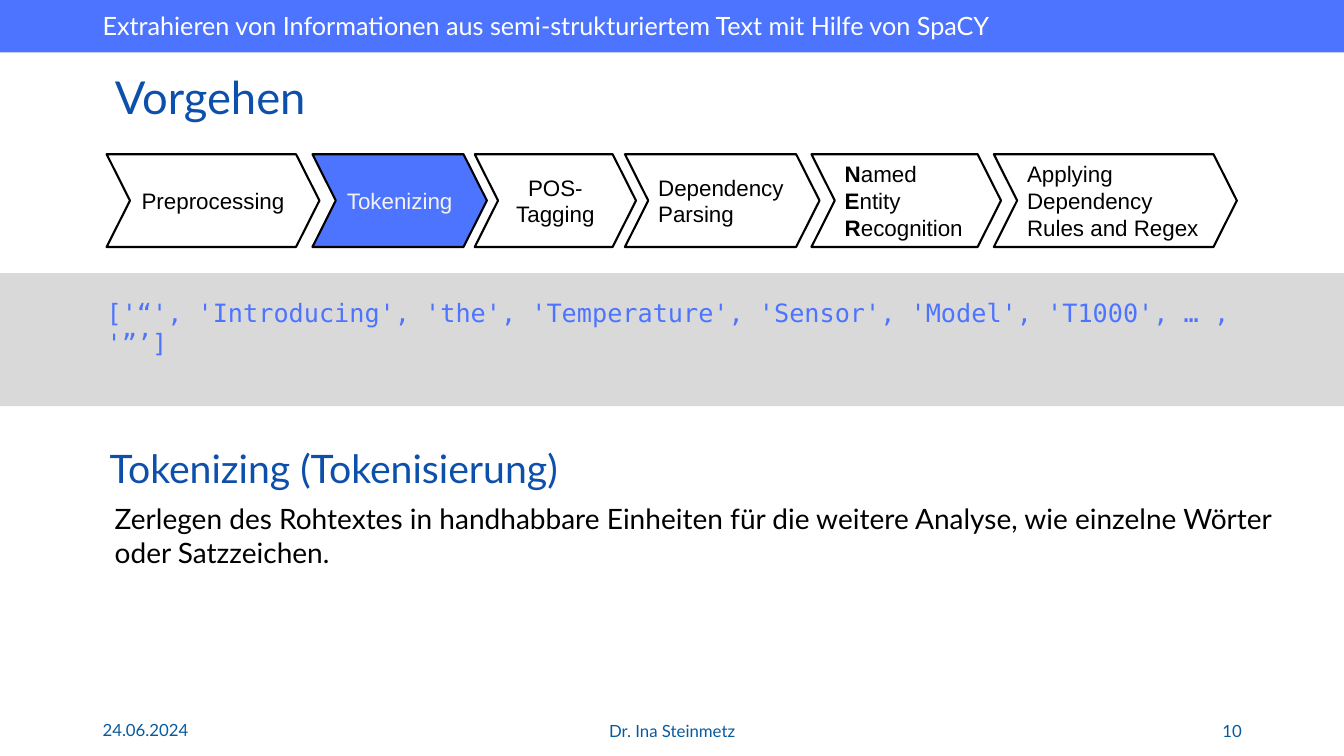
"""Build the tokenizing slide of a text-extraction talk."""
from dataclasses import dataclass

import pptx
import pptx.dml.color
import pptx.enum.shapes
import pptx.enum.text
import pptx.shapes.autoshape
import pptx.slide
import pptx.util

Pt = pptx.util.Pt
Align = pptx.enum.text.PP_ALIGN
Anchor = pptx.enum.text.MSO_ANCHOR
Preset = pptx.enum.shapes.MSO_SHAPE

COLORS = {
    "accent": "4D74FF",
    "heading": "0D50AB",
    "footer": "085A9E",
    "band": "D9D9D9",
    "black": "000000",
    "white": "FFFFFF",
    "active": "F2F2F2",
}
SLIDE_WIDTH, SLIDE_HEIGHT = 960, 540
STEP_TOP, STEP_HEIGHT = 110.16, 66.24


@dataclass(frozen=True)
class Label:
    text: str
    left: float
    top: float
    width: float
    height: float
    size: float
    color: str
    font: str = "Lato"
    align: Align = Align.LEFT
    anchor: Anchor = Anchor.TOP
    spacing: float = 1.0


@dataclass(frozen=True)
class Step:
    pieces: tuple[str, ...]
    left: float
    width: float
    align: Align = Align.LEFT
    active: bool = False


LABELS = (
    Label("Extrahieren von Informationen aus semi-strukturiertem Text mit Hilfe von SpaCY",
          66.2, 3.6, 795.6, 28.8, 18, "white"),
    Label("Vorgehen", 74.9, 51.1, 226, 41, 32.4, "heading", anchor=Anchor.MIDDLE, spacing=0.9),
    Label("['“', 'Introducing', 'the', 'Temperature', 'Sensor', 'Model', 'T1000', … , '”’]",
          69.1, 208.8, 835.2, 28.8, 18, "accent", font="DejaVu Sans Mono"),
    Label("Tokenizing (Tokenisierung)", 71.3, 313.9, 884.9, 41, 28, "heading"),
    Label("Zerlegen des Rohtextes in handhabbare Einheiten für die weitere Analyse, "
          "wie einzelne Wörter oder Satzzeichen.", 74.9, 355, 845.3, 55.4, 20, "black"),
    Label("24.06.2024", 66.2, 506.9, 216, 28.8, 12, "footer", anchor=Anchor.MIDDLE),
    Label("Dr. Ina Steinmetz", 318.2, 507.6, 324, 28.8, 12, "footer",
          align=Align.CENTER, anchor=Anchor.MIDDLE),
    Label("10", 678.2, 507.6, 216, 28.8, 12, "footer", align=Align.RIGHT, anchor=Anchor.MIDDLE),
)
STEPS = (
    Step(("Preprocessing",), 76.2, 152, Align.CENTER),
    Step(("Tokenizing",), 223.2, 124.6, Align.CENTER, active=True),
    Step(("POS-Tagging",), 339.1, 115.2, Align.CENTER),
    Step(("Dependency Parsing",), 446.4, 139),
    Step(("N", "amed ", "E", "ntity ", "R", "ecognition"), 579.6, 135.4),
    Step(("Applying Dependency Rules and Regex",), 709.9, 173.6),
)


def rgb(name: str) -> pptx.dml.color.RGBColor:
    """Return the named colour."""
    return pptx.dml.color.RGBColor.from_string(COLORS[name])


def style_runs(paragraph, font: str, size: float, color: str) -> None:
    """Apply one font to every run of a paragraph."""
    for run in paragraph.runs:
        run.font.name = font
        run.font.size = Pt(size)
        run.font.color.rgb = rgb(color)


def add_filled(slide: pptx.slide.Slide, preset: Preset, left: float, top: float, width: float,
               height: float, fill: str) -> pptx.shapes.autoshape.Shape:
    """Add a flat, borderless preset shape."""
    shape = slide.shapes.add_shape(preset, Pt(left), Pt(top), Pt(width), Pt(height))
    shape.shadow.inherit = False
    shape.fill.solid()
    shape.fill.fore_color.rgb = rgb(fill)
    shape.line.fill.background()
    return shape


def add_label(slide: pptx.slide.Slide, label: Label) -> None:
    """Add a wrapping text box."""
    frame = slide.shapes.add_textbox(
        Pt(label.left), Pt(label.top), Pt(label.width), Pt(label.height)).text_frame
    frame.word_wrap = True
    frame.vertical_anchor = label.anchor
    frame.text = label.text
    paragraph = frame.paragraphs[0]
    paragraph.alignment = label.align
    paragraph.line_spacing = label.spacing
    style_runs(paragraph, label.font, label.size, label.color)


def add_step(slide: pptx.slide.Slide, step: Step) -> None:
    """Add one chevron of the pipeline, with bold initials for split words."""
    chevron = add_filled(slide, Preset.CHEVRON, step.left, STEP_TOP, step.width, STEP_HEIGHT,
                         "accent" if step.active else "white")
    chevron.adjustments[0] = 0.252
    chevron.line.color.rgb = rgb("black")
    chevron.line.width = Pt(1.5)
    frame = chevron.text_frame
    frame.word_wrap = True
    frame.vertical_anchor = Anchor.MIDDLE
    paragraph = frame.paragraphs[0]
    paragraph.alignment = step.align
    for piece in step.pieces:
        paragraph.add_run().text = piece
    style_runs(paragraph, "Arial", 16, "active" if step.active else "black")
    if len(step.pieces) > 1:
        for initial in paragraph.runs[::2]:
            initial.font.bold = True


def main() -> None:
    """Draw the slide and save it."""
    deck = pptx.Presentation()
    deck.slide_width, deck.slide_height = Pt(SLIDE_WIDTH), Pt(SLIDE_HEIGHT)
    slide = deck.slides.add_slide(deck.slide_layouts[6])
    add_filled(slide, Preset.RECTANGLE, 0, 0, SLIDE_WIDTH, 37.5, "accent")
    add_filled(slide, Preset.RECTANGLE, 0, 195.1, SLIDE_WIDTH, 95, "band")
    for step in STEPS:
        add_step(slide, step)
    for label in LABELS:
        add_label(slide, label)
    deck.save("out.pptx")


if __name__ == "__main__":
    main()
